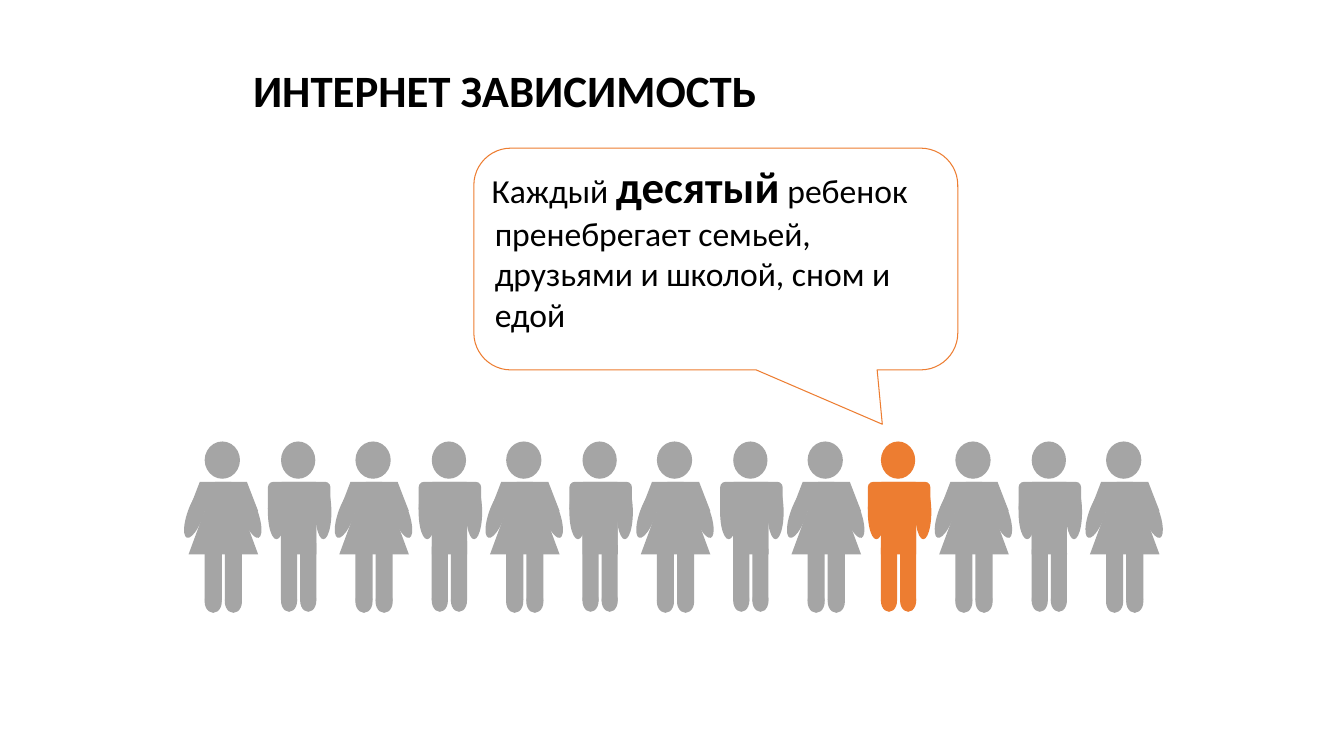
from pptx import Presentation
from pptx.dml.color import RGBColor
from pptx.enum.shapes import MSO_SHAPE as Shape
from pptx.enum.text import MSO_ANCHOR as Anchor, PP_ALIGN as Align
from pptx.util import Inches, Pt

COLORS = {"text": "000000", "person": "A5A5A5", "accent": "ED7D31"}
FONT = "Calibri"

WOMAN = [
    (Shape.OVAL, 0.16, 4.38, 0.35, 0.37, 0, None),
    (Shape.TRAPEZOID, 0, 4.78, 0.69, 0.72, 0, 0.384),
    (Shape.OVAL, 0.53, 4.84, 0.16, 0.51, 340.5, None),
    (Shape.TRAPEZOID, 0, 4.78, 0.69, 0.29, 0, 0.384),
    (Shape.FLOWCHART_ALTERNATE_PROCESS, 0.16, 5.1, 0.17, 0.88, 0, None),
    (Shape.OVAL, 0.16, 5.86, 0.17, 0.22, 0, None),
    (Shape.FLOWCHART_ALTERNATE_PROCESS, 0.36, 5.1, 0.17, 0.88, 0, None),
    (Shape.OVAL, 0.36, 5.86, 0.17, 0.22, 0, None),
    (Shape.OVAL, -0.01, 4.84, 0.16, 0.51, 19.7, None),
]
MAN = [
    (Shape.OVAL, 0.17, 4.38, 0.34, 0.37, 0, None),
    (Shape.OVAL, 0.04, 4.81, 0.17, 0.54, 0, None),
    (Shape.FLOWCHART_ALTERNATE_PROCESS, 0.17, 5.1, 0.16, 0.88, 0, None),
    (Shape.OVAL, 0.17, 5.85, 0.16, 0.22, 0, None),
    (Shape.FLOWCHART_ALTERNATE_PROCESS, 0.36, 5.1, 0.16, 0.88, 0, None),
    (Shape.OVAL, 0.36, 5.85, 0.16, 0.22, 0, None),
    (Shape.OVAL, 0.51, 4.81, 0.16, 0.54, 0, None),
    (Shape.FLOWCHART_ALTERNATE_PROCESS, 0.04, 4.78, 0.62, 0.32, 0, None),
    (Shape.TRAPEZOID, 0.17, 4.78, 0.35, 0.72, 0, 0.014),
]
PEOPLE_COUNT = 13
TENTH = 9
FIRST_LEFT = 1.87
PITCH = 2.99 / 4
TENTH_SHIFT = 0.03


def write(paragraph, text, size=24, bold=False, color="text"):
    run = paragraph.add_run()
    run.text = text
    run.font.name = FONT
    run.font.size = Pt(size)
    run.font.bold = bold
    run.font.color.rgb = RGBColor.from_string(COLORS[color])


presentation = Presentation()
presentation.slide_width = Inches(13.33)
presentation.slide_height = Inches(7.5)
slide = presentation.slides.add_slide(presentation.slide_layouts[5])

title = slide.shapes.title
title.left, title.top = Inches(2.41), Inches(0.3)
title.width, title.height = Inches(8.75), Inches(1.25)
title.text_frame.vertical_anchor = Anchor.MIDDLE
heading = title.text_frame.paragraphs[0]
heading.alignment = Align.LEFT
heading.line_spacing = 0.9
write(heading, "ИНТЕРНЕТ ЗАВИСИМОСТЬ", size=32, bold=True)

for index in range(PEOPLE_COUNT):
    person_left = FIRST_LEFT + index * PITCH
    if index >= TENTH:
        person_left -= TENTH_SHIFT
    color = COLORS["accent" if index == TENTH else "person"]
    person = slide.shapes.add_group_shape()
    for kind, left, top, width, height, rotation, slant in MAN if index % 2 else WOMAN:
        part = person.shapes.add_shape(
            kind, Inches(person_left + left), Inches(top), Inches(width), Inches(height)
        )
        part.rotation = rotation
        if slant is not None:
            part.adjustments[0] = slant
        part.shadow.inherit = False
        part.fill.solid()
        part.fill.fore_color.rgb = RGBColor.from_string(color)
        part.line.fill.background()

callout = slide.shapes.add_shape(
    Shape.ROUNDED_RECTANGULAR_CALLOUT, Inches(4.7), Inches(1.47), Inches(4.8), Inches(2.2)
)
for index, value in enumerate((0.344, 0.745, 0.167)):
    callout.adjustments[index] = value
callout.shadow.inherit = False
callout.fill.background()
callout.line.color.rgb = RGBColor.from_string(COLORS["accent"])
callout.line.width = Pt(0.75)

frame = callout.text_frame
frame.word_wrap = True
frame.vertical_anchor = Anchor.TOP
frame.margin_left = frame.margin_right = frame.margin_top = frame.margin_bottom = 0
message = frame.paragraphs[0]
message.alignment = Align.LEFT
message.space_after = Pt(6)
properties = message._p.get_or_add_pPr()
properties.set("marL", str(Inches(0.1)))
properties.set("indent", str(Inches(-0.03)))
write(message, "Каждый ")
write(message, "десятый", size=32, bold=True)
write(message, " ребенок пренебрегает семьей, друзьями и школой, сном и едой")

presentation.save("out.pptx")
